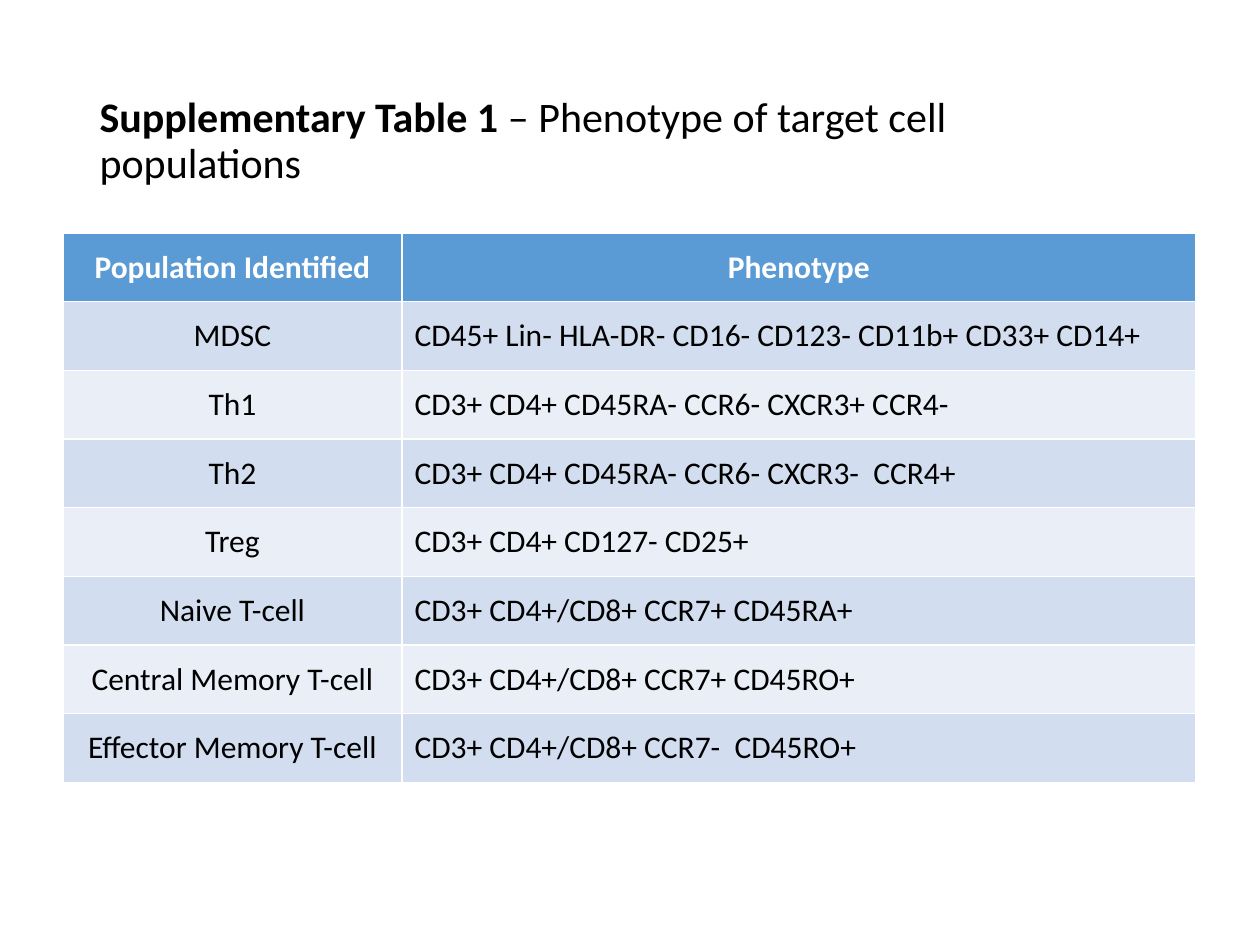
from pptx import Presentation, util as u
from pptx.dml.color import RGBColor
from pptx.enum import text


def style(font, size, color):
    font.name = "Calibri"
    font.size = u.Pt(size)
    font.color.rgb = RGBColor.from_string(color)


prs = Presentation()
prs.slide_width, prs.slide_height = u.Inches(10), u.Inches(7.5)
s = prs.slides.add_slide(prs.slide_layouts[5])

title = s.shapes.title
title.left, title.top = u.Inches(0.69), u.Inches(0.4)
title.width, title.height = u.Inches(8.62), u.Inches(1.45)
tf = title.text_frame
tf.word_wrap = True
tf.auto_size = text.MSO_AUTO_SIZE.NONE
tf.vertical_anchor = text.MSO_ANCHOR.MIDDLE
tf.margin_right = u.Inches(0.5)
p = tf.paragraphs[0]
p.alignment = text.PP_ALIGN.LEFT
p.line_spacing = 0.9
style(p.font, 24, "000000")
for words, bold in [
    ("Supplementary Table 1 ", True),
    ("– Phenotype of target cell populations", False),
]:
    r = p.add_run()
    r.text = words
    r.font.bold = bold

rows = [
    ("Population Identified", "Phenotype"),
    ("MDSC", "CD45+ Lin- HLA-DR- CD16- CD123- CD11b+ CD33+ CD14+"),
    ("Th1", "CD3+ CD4+ CD45RA- CCR6- CXCR3+ CCR4-"),
    ("Th2", "CD3+ CD4+ CD45RA- CCR6- CXCR3-  CCR4+"),
    ("Treg", "CD3+ CD4+ CD127- CD25+"),
    ("Naive T-cell", "CD3+ CD4+/CD8+ CCR7+ CD45RA+"),
    ("Central Memory T-cell", "CD3+ CD4+/CD8+ CCR7+ CD45RO+"),
    ("Effector Memory T-cell", "CD3+ CD4+/CD8+ CCR7-  CD45RO+"),
]
widths = [2.69, 6.3]
table = s.shapes.add_table(
    len(rows), len(widths), u.Inches(0.5), u.Inches(1.85),
    u.Inches(sum(widths)), u.Inches(4.36),
).table
for column, width in zip(table.columns, widths):
    column.width = u.Inches(width)

for i, row in enumerate(rows):
    header = i == 0
    fill = "5B9BD5" if header else ("EAEFF7", "D2DEEF")[i % 2]
    for j, words in enumerate(row):
        cell = table.cell(i, j)
        cell.text = words
        cell.vertical_anchor = text.MSO_ANCHOR.MIDDLE
        cell.fill.solid()
        cell.fill.fore_color.rgb = RGBColor.from_string(fill)
        p = cell.text_frame.paragraphs[0]
        centred = header or j == 0
        p.alignment = text.PP_ALIGN.CENTER if centred else text.PP_ALIGN.LEFT
        style(p.font, 18, "FFFFFF" if header else "000000")
        p.font.bold = header

prs.save("out.pptx")
